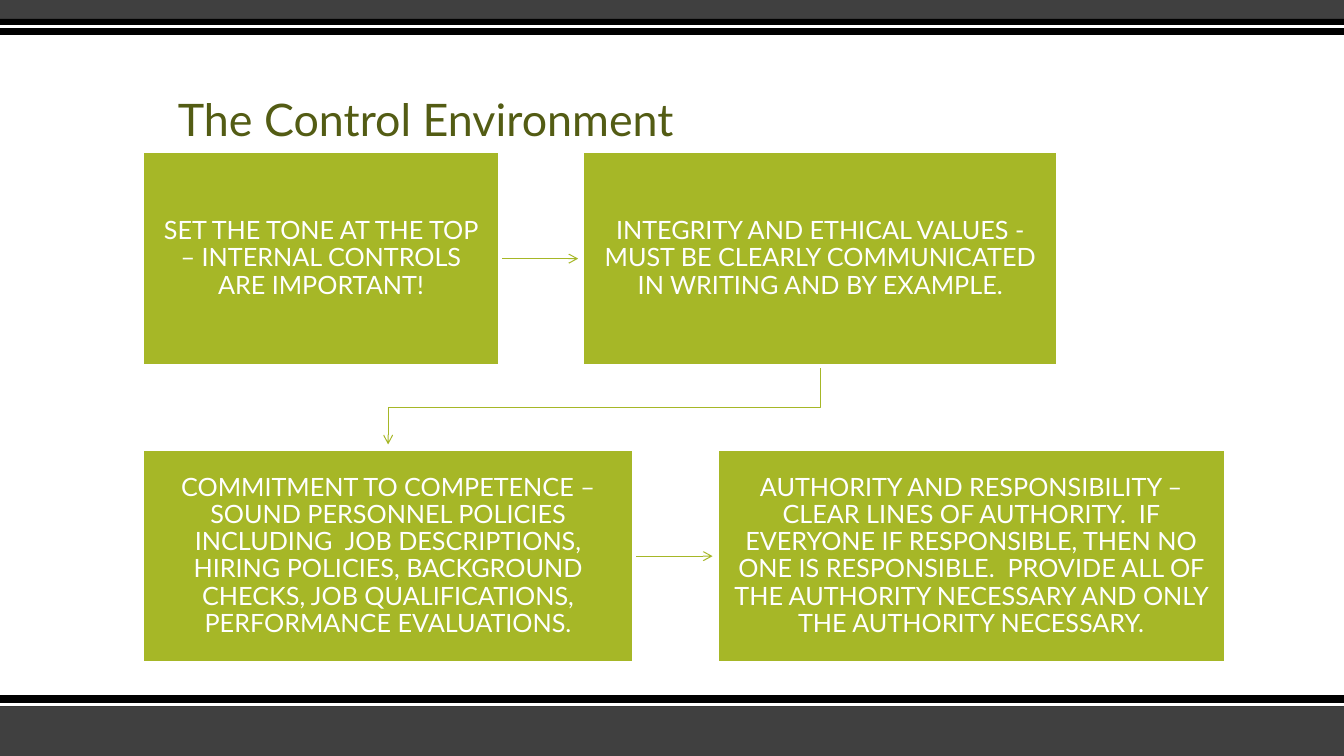
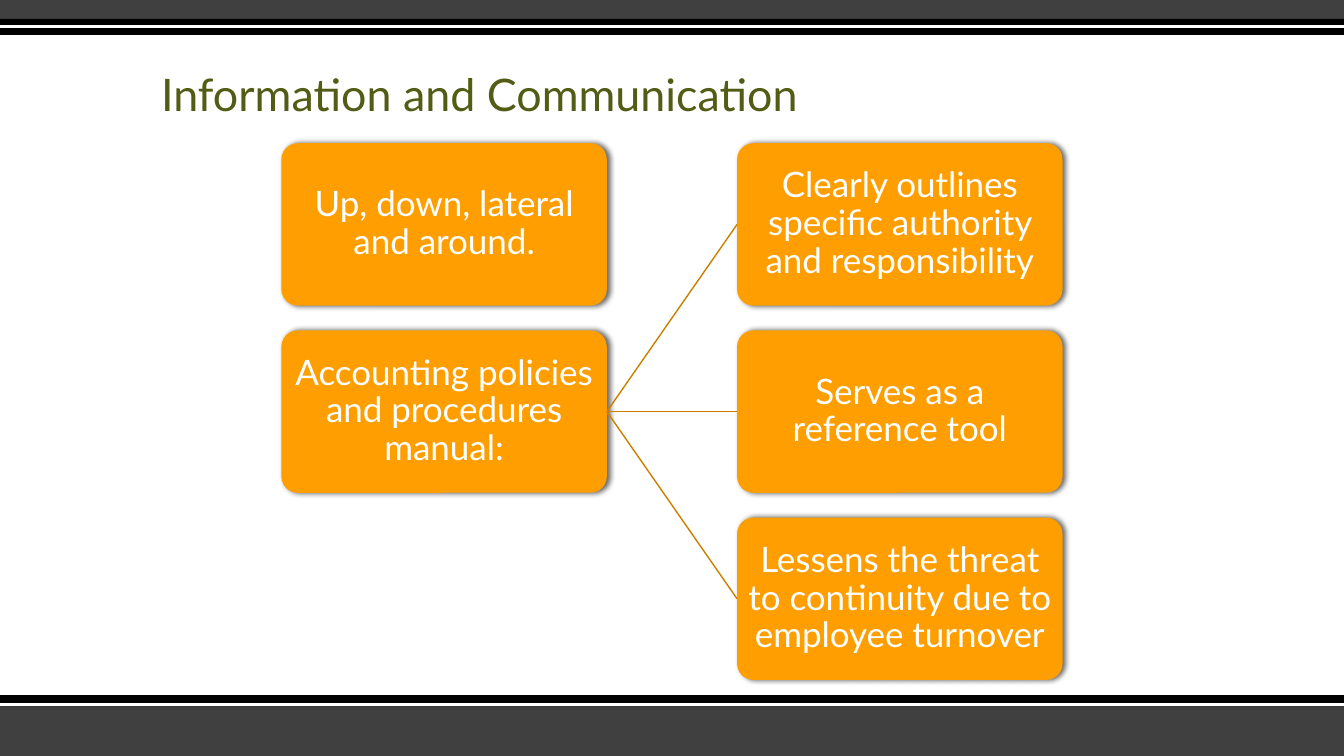
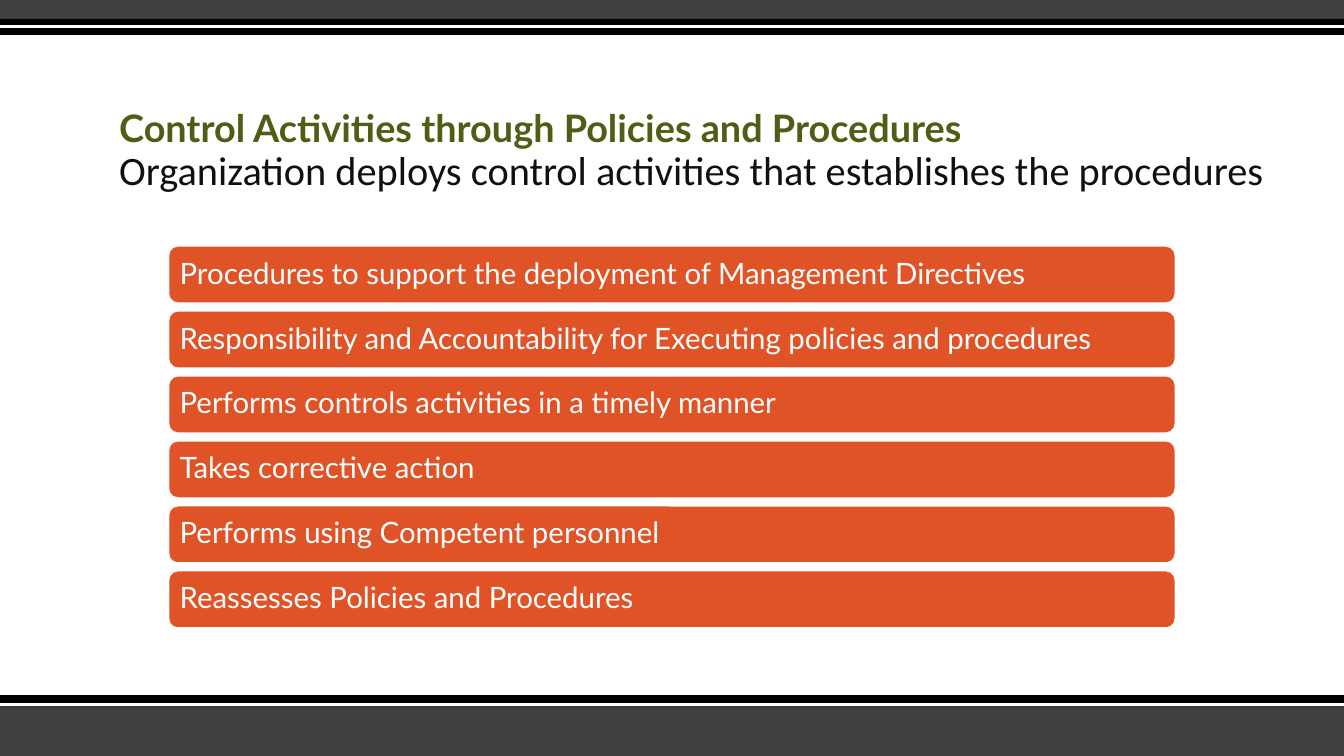
from dataclasses import dataclass

from lxml.etree import SubElement
from pptx import Presentation
from pptx.dml.color import RGBColor
from pptx.enum.shapes import MSO_CONNECTOR as CONN, MSO_SHAPE as SHAPE
from pptx.enum.text import MSO_ANCHOR as ANCHOR, PP_ALIGN as ALIGN
from pptx.oxml.ns import qn
from pptx.util import Pt


@dataclass(frozen=True)
class Theme:
    font: str = "Lato"
    subtitle_font: str = "Calibri"
    title: str = "535C14"
    subtitle: str = "101010"
    white: str = "FFFFFF"
    black: str = "000000"
    grey: str = "404040"
    green: str = "A6B727"
    orange: str = "FE9E00"
    brown: str = "CB7F00"
    red: str = "DF5327"
    title_size: float = 32
    heading_size: float = 27
    subtitle_size: float = 28.8
    step_size: float = 18
    tree_size: float = 25
    bar_size: float = 21
    spacing: float = 0.9


T = Theme()
WIDTH, HEIGHT = 960, 540

# top, height, colour
BANDS = [
    (504, 36, T.grey), (496.5, 8, T.black), (502.3, 2, T.white),
    (0, 13.5, T.grey), (13.5, 11.5, T.black), (18, 2, T.white),
]

# rows of (text, box width)
CONTROL_STEPS = [
    [("SET THE TONE AT THE TOP – INTERNAL CONTROLS ARE IMPORTANT!", 255.5),
     ("INTEGRITY AND ETHICAL VALUES - MUST BE CLEARLY COMMUNICATED IN WRITING "
      "AND BY EXAMPLE.", 340)],
    [("COMMITMENT TO COMPETENCE –SOUND PERSONNEL POLICIES INCLUDING  JOB "
      "DESCRIPTIONS, HIRING POLICIES, BACKGROUND CHECKS, JOB QUALIFICATIONS, "
      "PERFORMANCE EVALUATIONS.", 351.5),
     ("AUTHORITY AND RESPONSIBILITY – CLEAR LINES OF AUTHORITY.  IF EVERYONE IF "
      "RESPONSIBLE, THEN NO ONE IS RESPONSIBLE.  PROVIDE ALL OF THE AUTHORITY "
      "NECESSARY AND ONLY THE AUTHORITY NECESSARY.", 363.5)],
]

CHANNELS = ["Up, down, lateral and around.",
            "Accounting policies and procedures manual:"]
MANUAL_BENEFITS = ["Clearly outlines specific authority and responsibility",
                   "Serves as a reference tool",
                   "Lessens the threat to continuity due to employee turnover"]

ACTIVITIES = [
    "Procedures to support the deployment of Management Directives",
    "Responsibility and Accountability for Executing policies and procedures",
    "Performs controls activities in a timely manner",
    "Takes corrective action",
    "Performs using Competent personnel",
    "Reassesses Policies and Procedures",
]


def rgb(color):
    return RGBColor.from_string(color)


def set_text(p, text, size, color, font=T.font, bold=False):
    p.text = text
    p.line_spacing = T.spacing
    p.font.name, p.font.size, p.font.bold = font, Pt(size), bold
    p.font.color.rgb = rgb(color)


def add_box(s, kind, at, fill, border=0):
    sp = s.shapes.add_shape(kind, *map(Pt, at))
    sp.shadow.inherit = False
    sp.fill.solid()
    sp.fill.fore_color.rgb = rgb(fill)
    if border:
        sp.line.color.rgb = rgb(T.white)
        sp.line.width = Pt(border)
    else:
        sp.line.fill.background()
    return sp


def add_label(sp, text, size, inset_x, inset_y, align=ALIGN.CENTER):
    tf = sp.text_frame
    tf.word_wrap = True
    tf.vertical_anchor = ANCHOR.MIDDLE
    tf.margin_left = tf.margin_right = Pt(inset_x)
    tf.margin_top = tf.margin_bottom = Pt(inset_y)
    set_text(tf.paragraphs[0], text, size, T.white)
    tf.paragraphs[0].alignment = align


def style_line(sp, color, width, arrow=False):
    sp.line.color.rgb = rgb(color)
    sp.line.width = Pt(width)
    props = sp.element.spPr
    if arrow:
        SubElement(props.find(qn("a:ln")), qn("a:tailEnd"), type="arrow")
    if props.find(qn("a:effectLst")) is None:
        SubElement(props, qn("a:effectLst"))


def add_shadow(sp):
    effects = sp.element.spPr.find(qn("a:effectLst"))
    shadow = SubElement(effects, qn("a:outerShdw"), blurRad=str(Pt(4)),
                        dist=str(Pt(2)), dir="0", rotWithShape="0")
    color = SubElement(shadow, qn("a:srgbClr"), val=T.black)
    SubElement(color, qn("a:alpha"), val="60000")


def add_slide(prs):
    s = prs.slides.add_slide(prs.slide_layouts[6])
    for top, height, color in BANDS:
        add_box(s, SHAPE.RECTANGLE, (0, top, WIDTH, height), color)
    return s


def add_title(s, left, top, width, title, size=T.title_size, bold=False):
    tf = s.shapes.add_textbox(*map(Pt, (left, top, width, 84))).text_frame
    tf.word_wrap = True
    tf.vertical_anchor = ANCHOR.BOTTOM
    set_text(tf.paragraphs[0], title, size, T.title, bold=bold)
    return tf


def control_environment(prs):
    s = add_slide(prs)
    add_title(s, 120, 24, 720, "The Control Environment")
    left, top, height, pitch = 101.5, 108, 153.5, 212.5
    gap, clearance = 59, 3
    rows = []
    for i, row in enumerate(CONTROL_STEPS):
        x, y, boxes = left, top + i * pitch, []
        for text, width in row:
            sp = add_box(s, SHAPE.RECTANGLE, (x, y, width, height), T.green, 3)
            add_label(sp, text, T.step_size, 12, 13)
            boxes.append(sp)
            x += width + gap
        rows.append(boxes)

    for first, second in rows:
        mid = first.top + first.height // 2
        arrow = s.shapes.add_connector(CONN.STRAIGHT, first.left + first.width, mid,
                                       second.left - Pt(clearance), mid)
        arrow.begin_connect(first, 3)
        style_line(arrow, T.green, 0.75, arrow=True)
        first.element.addprevious(arrow.element)

    source, target = rows[0][1], rows[1][0]
    x1 = source.left + source.width // 2
    x2 = target.left + target.width // 2
    y1, y2 = source.top + source.height, target.top
    turn = (y1 + y2) // 2
    builder = s.shapes.build_freeform(x1, y1)
    builder.add_line_segments([(x1, turn), (x2, turn), (x2, y2 - Pt(clearance))],
                              close=False)
    elbow = builder.convert_to_shape()
    elbow.fill.background()
    style_line(elbow, T.green, 0.75, arrow=True)
    source.element.addprevious(elbow.element)


def information(prs):
    s = add_slide(prs)
    add_title(s, 108, 6, 720, "Information and Communication")
    width, height, top, pitch = 232.5, 116, 102.3, 133.7

    def add_column(left, texts):
        boxes = []
        for i, text in enumerate(texts):
            sp = add_box(s, SHAPE.ROUNDED_RECTANGLE,
                         (left, top + i * pitch, width, height), T.orange)
            sp.adjustments[0] = 0.1
            add_shadow(sp)
            add_label(sp, text, T.tree_size, 1.2, 1.2)
            boxes.append(sp)
        return boxes

    manual = add_column(201, CHANNELS)[-1]
    for benefit in add_column(526.5, MANUAL_BENEFITS):
        link = s.shapes.add_connector(CONN.STRAIGHT, 0, 0, 0, 0)
        link.begin_connect(manual, 3)
        link.end_connect(benefit, 1)
        style_line(link, T.brown, 1)


def control_activities(prs):
    s = add_slide(prs)
    tf = add_title(s, 78, 58.5, 840,
                   "Control Activities through Policies and Procedures",
                   T.heading_size, bold=True)
    set_text(tf.add_paragraph(),
             "Organization deploys control activities that establishes the procedures",
             T.subtitle_size, T.subtitle, T.subtitle_font)
    for i, text in enumerate(ACTIVITIES):
        sp = add_box(s, SHAPE.ROUNDED_RECTANGLE, (120, 175.2 + i * 46.4, 720, 41.8),
                     T.red, 2)
        add_label(sp, text, T.bar_size, 6.3, 6.3, ALIGN.LEFT)


def main():
    prs = Presentation()
    prs.slide_width, prs.slide_height = Pt(WIDTH), Pt(HEIGHT)
    control_environment(prs)
    information(prs)
    control_activities(prs)
    prs.save("out.pptx")


if __name__ == "__main__":
    main()
